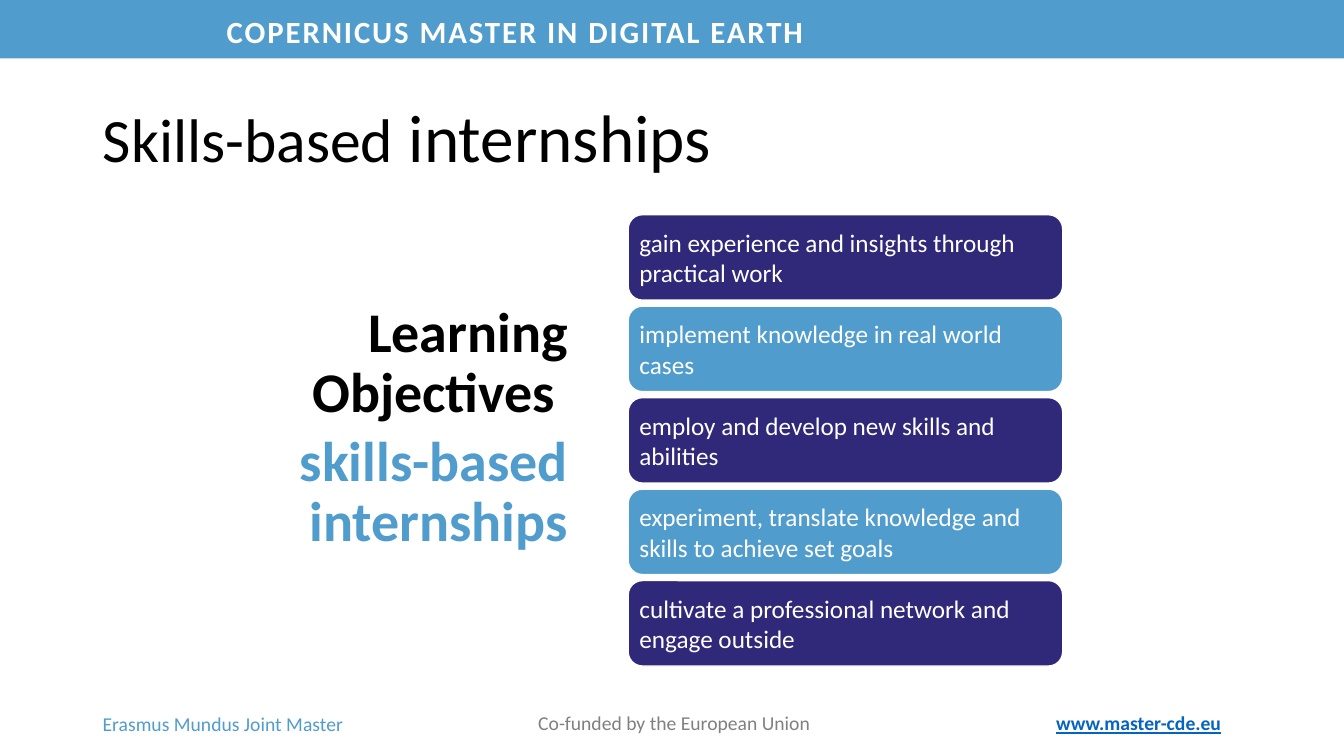
from dataclasses import dataclass

from pptx import Presentation
from pptx import util as u
from pptx.dml import color
from pptx.enum import shapes, text


@dataclass(frozen=True)
class Theme:
    font: str = "Calibri"
    blue: str = "509CCD"
    navy: str = "302878"
    white: str = "FFFFFF"
    black: str = "000000"
    gray: str = "808080"
    link: str = "0563C1"
    small: int = 14
    body: int = 18
    head: int = 22
    big: int = 40
    title: int = 44
    accent: int = 48


class Deck:
    """Places elements by percent of the slide's width and height."""

    def __init__(self, theme):
        self.theme = theme
        self.prs = Presentation()
        self.prs.slide_width = u.Inches(13.333)
        self.prs.slide_height = u.Inches(7.5)
        self.slide = self.prs.slides.add_slide(self.prs.slide_layouts[5])

    def area(self, x, y, w, h):
        wide, high = self.prs.slide_width, self.prs.slide_height
        return [round(part * size / 100)
                for part, size in zip((x, y, w, h), (wide, high) * 2)]

    def style(self, run, size, tone, bold=False):
        font = run.font
        font.name, font.size, font.bold = self.theme.font, u.Pt(size), bold
        font.color.rgb = color.RGBColor.from_string(tone)
        return run

    def title(self, box, parts):
        item = self.slide.shapes.title
        item.left, item.top, item.width, item.height = self.area(*box)
        frame = item.text_frame
        frame.auto_size = text.MSO_AUTO_SIZE.NONE
        frame.vertical_anchor = text.MSO_ANCHOR.TOP
        line = frame.paragraphs[0]
        line.alignment, line.line_spacing = text.PP_ALIGN.LEFT, 0.8
        for words, size in parts:
            run = line.add_run()
            run.text = words
            self.style(run, size, self.theme.black)

    def label(self, box, lines, size, tones, bold=False,
              align=text.PP_ALIGN.LEFT, anchor=text.MSO_ANCHOR.TOP):
        frame = self.slide.shapes.add_textbox(*self.area(*box)).text_frame
        frame.word_wrap, frame.vertical_anchor = True, anchor
        frame.text = "\n".join(lines)
        for line, tone in zip(frame.paragraphs, tones):
            line.alignment = align
            self.style(line.runs[0], size, tone, bold)
        return frame

    def block(self, kind, box, fill):
        item = self.slide.shapes.add_shape(kind, *self.area(*box))
        item.shadow.inherit = False
        item.fill.solid()
        item.fill.fore_color.rgb = color.RGBColor.from_string(fill)
        item.line.fill.background()
        return item

    def card(self, box, words, fill):
        item = self.block(shapes.MSO_SHAPE.ROUNDED_RECTANGLE, box, fill)
        item.line.color.rgb = color.RGBColor.from_string(self.theme.white)
        item.line.width = u.Pt(1)
        frame = item.text_frame
        frame.word_wrap = True
        frame.vertical_anchor = text.MSO_ANCHOR.MIDDLE
        frame.margin_left = frame.margin_right = u.Inches(0.07)
        frame.margin_top = frame.margin_bottom = u.Inches(0.07)
        frame.text = words
        line = frame.paragraphs[0]
        line.alignment = text.PP_ALIGN.LEFT
        self.style(line.runs[0], self.theme.body, self.theme.white)


GOALS = [
    "gain experience and insights through practical work",
    "implement knowledge in real world cases",
    "employ and develop new skills and abilities",
    "experiment, translate knowledge and skills to achieve set goals",
    "cultivate a professional network and engage outside",
]


def main():
    theme = Theme()
    deck = Deck(theme)
    middle = text.MSO_ANCHOR.MIDDLE

    # Header band
    deck.block(shapes.MSO_SHAPE.RECTANGLE, (0, 0, 100, 7.75), theme.blue)
    head = deck.label((16.13, 0.8, 61.5, 6.67),
                      ["COPERNICUS MASTER IN DIGITAL EARTH"],
                      theme.head, [theme.white], bold=True, anchor=middle)
    head.paragraphs[0].runs[0]._r.get_or_add_rPr().set("spc", "140")

    # Title
    deck.title((6.9, 14, 86.25, 10.67),
               [("Skills-based", theme.title), (" internships", theme.accent)])

    # Learning objectives
    aims = deck.label((10.65, 16, 32.33, 81.47),
                      ["Learning Objectives ", "skills-based internships"],
                      theme.big, [theme.black, theme.blue], bold=True,
                      align=text.PP_ALIGN.RIGHT, anchor=middle)
    for line in aims.paragraphs:
        line.line_spacing, line.space_after = 0.9, u.Pt(6)

    # Goal cards in alternating colours
    top, step = 28.4, 12.1
    for row, goal in enumerate(GOALS):
        fill = theme.blue if row % 2 else theme.navy
        deck.card((46.74, top + row * step, 32.33, 11.3), goal, fill)

    # Footer
    deck.label((6.9, 93.47, 31.05, 4.53), ["Erasmus Mundus Joint Master"],
               theme.small, [theme.blue])
    deck.label((23.55, 93.33, 53.25, 4.53), ["Co-funded by the European Union"],
               theme.small, [theme.gray], align=text.PP_ALIGN.CENTER)
    site = deck.label((77.85, 93.2, 15.45, 4.8), ["www.master-cde.eu"],
                      theme.small, [theme.link], bold=True, anchor=middle)
    site.paragraphs[0].runs[0].font.underline = True

    deck.prs.save("out.pptx")


if __name__ == "__main__":
    main()
